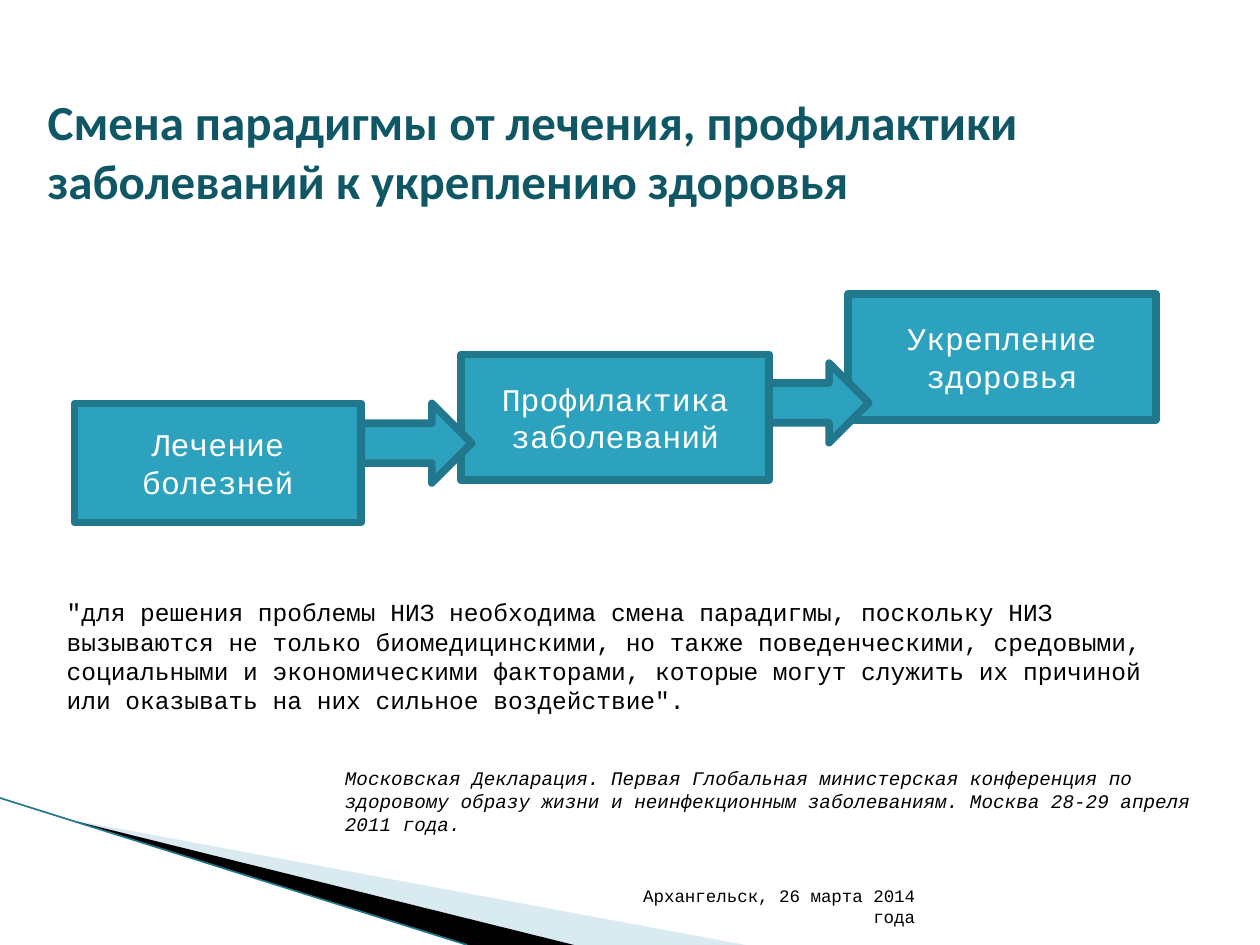
from collections import namedtuple

from lxml.etree import SubElement
from pptx import Presentation
from pptx.dml.color import RGBColor
from pptx.enum.shapes import MSO_CONNECTOR, MSO_SHAPE
from pptx.enum.text import MSO_ANCHOR, PP_ALIGN
from pptx.oxml.ns import qn
from pptx.util import Pt

TITLE_TEAL = RGBColor(0x10, 0x57, 0x66)
STEP_FILL = RGBColor(0x2D, 0xA2, 0xBF)
STEP_EDGE = RGBColor(0x21, 0x78, 0x8D)
PALE_BLUE = RGBColor(0xA0, 0xCB, 0xDC)
BLACK = RGBColor(0, 0, 0)
WHITE = RGBColor(0xFF, 0xFF, 0xFF)

TITLE_FONT = dict(name="Calibri", size=Pt(28), bold=True)
STEP_FONT = dict(name="Courier New", size=Pt(18))
QUOTE_FONT = dict(name="Courier New", size=Pt(14))
SOURCE_FONT = dict(name="Courier New", size=Pt(11), italic=True)
VENUE_FONT = dict(name="Courier New", size=Pt(10))

Box = namedtuple("Box", "left top width height")


def in_points(box):
    return [Pt(length) for length in box]


def write(holder, text, font, colour, align=PP_ALIGN.LEFT, anchor=MSO_ANCHOR.TOP):
    frame = holder.text_frame
    frame.word_wrap = True
    frame.vertical_anchor = anchor
    paragraph = frame.paragraphs[0]
    paragraph.alignment = align
    run = paragraph.add_run()
    run.text = text
    for attribute, value in font.items():
        setattr(run.font, attribute, value)
    run.font.color.rgb = colour


def add_wedge(slide, box, corners, colour, opacity=100):
    """Draw a filled triangle whose corners are offsets from the box."""
    points = [(Pt(box.left + x), Pt(box.top + y)) for x, y in corners]
    builder = slide.shapes.build_freeform(*points[0], scale=1.0)
    builder.add_line_segments(points[1:], close=True)
    wedge = builder.convert_to_shape()
    wedge.shadow.inherit = False
    wedge.fill.solid()
    wedge.fill.fore_color.rgb = colour
    wedge.line.fill.background()
    if opacity < 100:
        tint = wedge._element.spPr.find(".//" + qn("a:srgbClr"))
        SubElement(tint, qn("a:alpha"), val=str(opacity * 1000))


def add_corner_decoration(slide, box):
    tip = (38, 12)
    add_wedge(slide, box, [tip, (box.width, box.height), (328, box.height)],
              PALE_BLUE, opacity=40)
    add_wedge(slide, box, [tip, (328, box.height), (267, box.height)], BLACK)
    edge = slide.shapes.add_connector(
        MSO_CONNECTOR.STRAIGHT, Pt(box.left), Pt(box.top),
        Pt(box.left + 267), Pt(box.top + box.height))
    edge.line.color.rgb = STEP_EDGE
    edge.line.width = Pt(0.95)
    SubElement(edge._element.spPr, qn("a:effectLst"))


def add_title(slide, box):
    title = slide.shapes.title
    title.left, title.top, title.width, title.height = in_points(box)
    write(title, "Смена парадигмы от лечения, профилактики заболеваний "
          "к укреплению здоровья", TITLE_FONT, TITLE_TEAL, anchor=MSO_ANCHOR.MIDDLE)


def add_block(slide, kind, box):
    block = slide.shapes.add_shape(kind, *in_points(box))
    block.shadow.inherit = False
    block.fill.solid()
    block.fill.fore_color.rgb = STEP_FILL
    block.line.color.rgb = STEP_EDGE
    block.line.width = Pt(4.33)
    return block


def add_paradigm_steps(slide, box):
    """Three rising steps, joined by arrows that overlap the next step."""
    steps = [
        ("Лечение болезней", Box(0, 62.5, 164, 68)),
        ("Профилактика заболеваний", Box(221, 34.5, 176, 72)),
        ("Укрепление здоровья", Box(442, 0, 176, 72)),
    ]
    arrows = [Box(164, 62.5, 63, 45.5), Box(397, 39.5, 57, 45.5)]

    def placed(part):
        return part._replace(left=box.left + part.left, top=box.top + part.top)

    for label, part in steps:
        step = add_block(slide, MSO_SHAPE.RECTANGLE, placed(part))
        write(step, label, STEP_FONT, WHITE, PP_ALIGN.CENTER, MSO_ANCHOR.MIDDLE)
    for part in arrows:
        add_block(slide, MSO_SHAPE.RIGHT_ARROW, placed(part))


def add_passage(slide, box, text, font, **layout):
    passage = slide.shapes.add_textbox(*in_points(box))
    write(passage, text, font, BLACK, **layout)


def main():
    deck = Presentation()
    deck.slide_width, deck.slide_height = Pt(720), Pt(540)
    slide = deck.slides.add_slide(deck.slide_layouts[5])

    add_corner_decoration(slide, Box(0, 456, 426, 84))
    add_title(slide, Box(20, 37.5, 669, 96.5))
    add_paradigm_steps(slide, Box(42.5, 168, 618, 130.5))
    add_passage(
        slide, Box(31, 337.7, 646.5, 75),
        "\"для решения проблемы НИЗ необходима смена парадигмы, поскольку НИЗ "
        "вызываются не только биомедицинскими, но также поведенческими, средовыми, "
        "социальными и экономическими факторами, которые могут служить их причиной "
        "или оказывать на них сильное воздействие\".", QUOTE_FONT)
    add_passage(
        slide, Box(190, 434.2, 530, 55.5),
        "Московская Декларация. Первая Глобальная министерская конференция по "
        "здоровому образу жизни и неинфекционным заболеваниям. "
        "Москва 28-29 апреля 2011 года.", SOURCE_FONT)
    add_passage(
        slide, Box(345, 504.7, 185, 28.8), "Архангельск, 26 марта 2014 года",
        VENUE_FONT, align=PP_ALIGN.RIGHT, anchor=MSO_ANCHOR.BOTTOM)

    deck.save("out.pptx")


if __name__ == "__main__":
    main()
